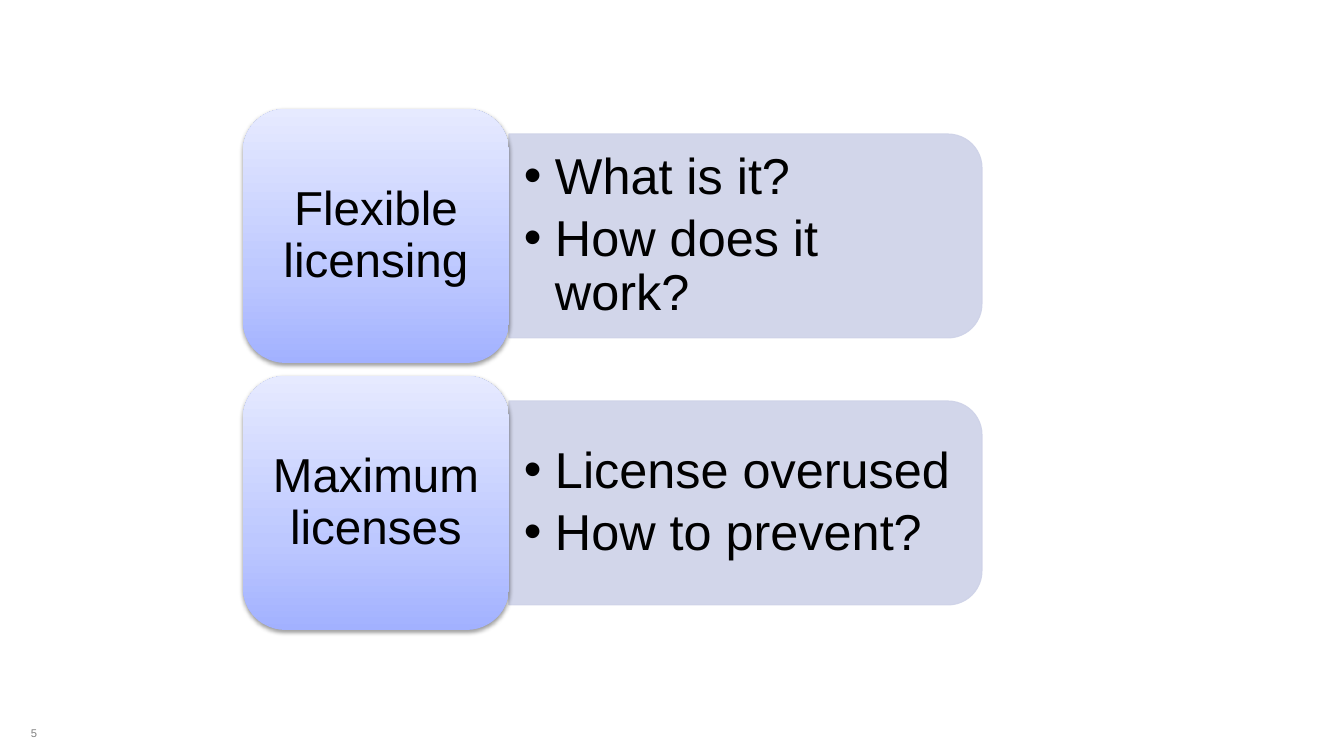
import pptx
import pptx.util
import pptx.dml.color
import pptx.enum.shapes
import pptx.enum.text
import pptx.oxml.ns
from lxml import etree

# Content
TOPICS = [
    ("Flexible licensing", ["What is it?", "How does it work?"]),
    ("Maximum licenses", ["License overused", "How to prevent?"]),
]
PAGE_NUMBER = "5"

# Look
FONT = "Arial"
BLACK = pptx.dml.color.RGBColor(0x00, 0x00, 0x00)
GREY = pptx.dml.color.RGBColor(0x80, 0x80, 0x80)
PANEL_BLUE = pptx.dml.color.RGBColor(0xCE, 0xD2, 0xE8)
TILE_STOPS = [
    (0, pptx.dml.color.RGBColor(0xA2, 0xB1, 0xFF)),
    (35, pptx.dml.color.RGBColor(0xBD, 0xC8, 0xFF)),
    (100, pptx.dml.color.RGBColor(0xE6, 0xEA, 0xFF)),
]

# Layout in px
SLIDE_W, SLIDE_H = 1344, 756
TILE_X, TILE_Y, TILE_W, TILE_H = 243, 109, 266, 254
ROW_STEP = 267
PANEL_W, PANEL_H = 473, 204
LIST_W, LIST_H = 463, 184
HANG = 31


def px(length):
    return pptx.util.Emu(round(length * 914400 / 100.8))


def add_child(parent, tag, **attributes):
    child = etree.SubElement(parent, pptx.oxml.ns.qn(tag))
    for key, value in attributes.items():
        child.set(key, str(value))
    return child


def place(shape, left, top, width, height):
    shape.left, shape.top = px(left), px(top)
    shape.width, shape.height = px(width), px(height)


def set_frame(frame, side, edge):
    frame.word_wrap = True
    frame.auto_size = pptx.enum.text.MSO_AUTO_SIZE.NONE
    frame.vertical_anchor = pptx.enum.text.MSO_ANCHOR.MIDDLE
    frame.margin_left = frame.margin_right = px(side)
    frame.margin_top = frame.margin_bottom = px(edge)


def set_font(paragraph, size, color):
    for run in paragraph.runs:
        run.font.name = FONT
        run.font.size = pptx.util.Pt(size)
        run.font.color.rgb = color


def add_panel(slide, left, top):
    # Turned a quarter so that the rounded corners face right
    panel = slide.shapes.add_shape(
        pptx.enum.shapes.MSO_SHAPE.ROUND_2_SAME_RECTANGLE,
        px(left + (PANEL_W - PANEL_H) / 2), px(top + (PANEL_H - PANEL_W) / 2),
        px(PANEL_H), px(PANEL_W))
    panel.rotation = 90
    panel.shadow.inherit = False
    panel.fill.solid()
    panel.fill.fore_color.rgb = PANEL_BLUE
    panel.line.color.rgb = PANEL_BLUE
    panel.line.width = pptx.util.Pt(0.75)
    for color in panel._element.spPr.iter(pptx.oxml.ns.qn("a:srgbClr")):
        add_child(color, "a:alpha", val=90000)


def fill_list(slide, bullets, questions, left, top):
    slide.shapes._spTree.append(bullets._element)  # in front of its panel
    place(bullets, left, top, LIST_W, LIST_H)
    frame = bullets.text_frame
    frame.text = "\n".join(questions)
    set_frame(frame, 15, 7)
    for paragraph in frame.paragraphs:
        paragraph.line_spacing = 0.9
        paragraph.space_before = pptx.util.Pt(0)
        paragraph.space_after = pptx.util.Pt(5.4)
        properties = paragraph._p.get_or_add_pPr()
        properties.set("marL", str(px(HANG)))
        properties.set("indent", str(-px(HANG)))
        add_child(properties, "a:buFont", typeface=FONT)
        add_child(properties, "a:buChar", char="•")
        set_font(paragraph, 36, BLACK)


def add_tile(slide, topic, top):
    tile = slide.shapes.add_shape(
        pptx.enum.shapes.MSO_SHAPE.ROUNDED_RECTANGLE,
        px(TILE_X), px(top), px(TILE_W), px(TILE_H))
    tile.line.fill.background()
    tile.fill.gradient()
    tile.fill.gradient_angle = 90
    properties = tile._element.spPr
    stops = properties.find(".//" + pptx.oxml.ns.qn("a:gsLst"))
    for stop in list(stops):
        stops.remove(stop)
    for position, color in TILE_STOPS:
        stop = add_child(stops, "a:gs", pos=position * 1000)
        add_child(stop, "a:srgbClr", val=color)

    # Soft shadow below the tile
    tile.shadow.inherit = False
    effects = properties.find(pptx.oxml.ns.qn("a:effectLst"))
    shadow = add_child(effects, "a:outerShdw", blurRad=pptx.util.Pt(3.1),
                       dist=pptx.util.Pt(1.6), dir=5400000, rotWithShape=0)
    add_child(add_child(shadow, "a:srgbClr", val=BLACK), "a:alpha", val=38000)

    tile.text_frame.text = topic
    set_frame(tile.text_frame, 14, 7)
    label = tile.text_frame.paragraphs[0]
    label.alignment = pptx.enum.text.PP_ALIGN.CENTER
    label.line_spacing = 0.9
    set_font(label, 34, BLACK)


def main():
    deck = pptx.Presentation()
    deck.slide_width, deck.slide_height = px(SLIDE_W), px(SLIDE_H)
    slide = deck.slides.add_slide(deck.slide_layouts.get_by_name("Two Content"))
    title, *lists = list(slide.placeholders)
    title._element.getparent().remove(title._element)

    # Page number
    number = slide.shapes.add_textbox(px(21), px(722), px(68), px(23))
    number.text_frame.word_wrap = True
    number.text_frame.text = PAGE_NUMBER
    number.text_frame.paragraphs[0].line_spacing = 0.95
    set_font(number.text_frame.paragraphs[0], 8, GREY)

    # One row per topic: panel, questions, tile
    panel_x = TILE_X + TILE_W
    for row, ((topic, questions), bullets) in enumerate(zip(TOPICS, lists)):
        top = TILE_Y + row * ROW_STEP
        middle = top + TILE_H / 2
        add_panel(slide, panel_x, middle - PANEL_H / 2)
        fill_list(slide, bullets, questions, panel_x, middle - LIST_H / 2)
        add_tile(slide, topic, top)

    deck.save("out.pptx")


if __name__ == "__main__":
    main()
